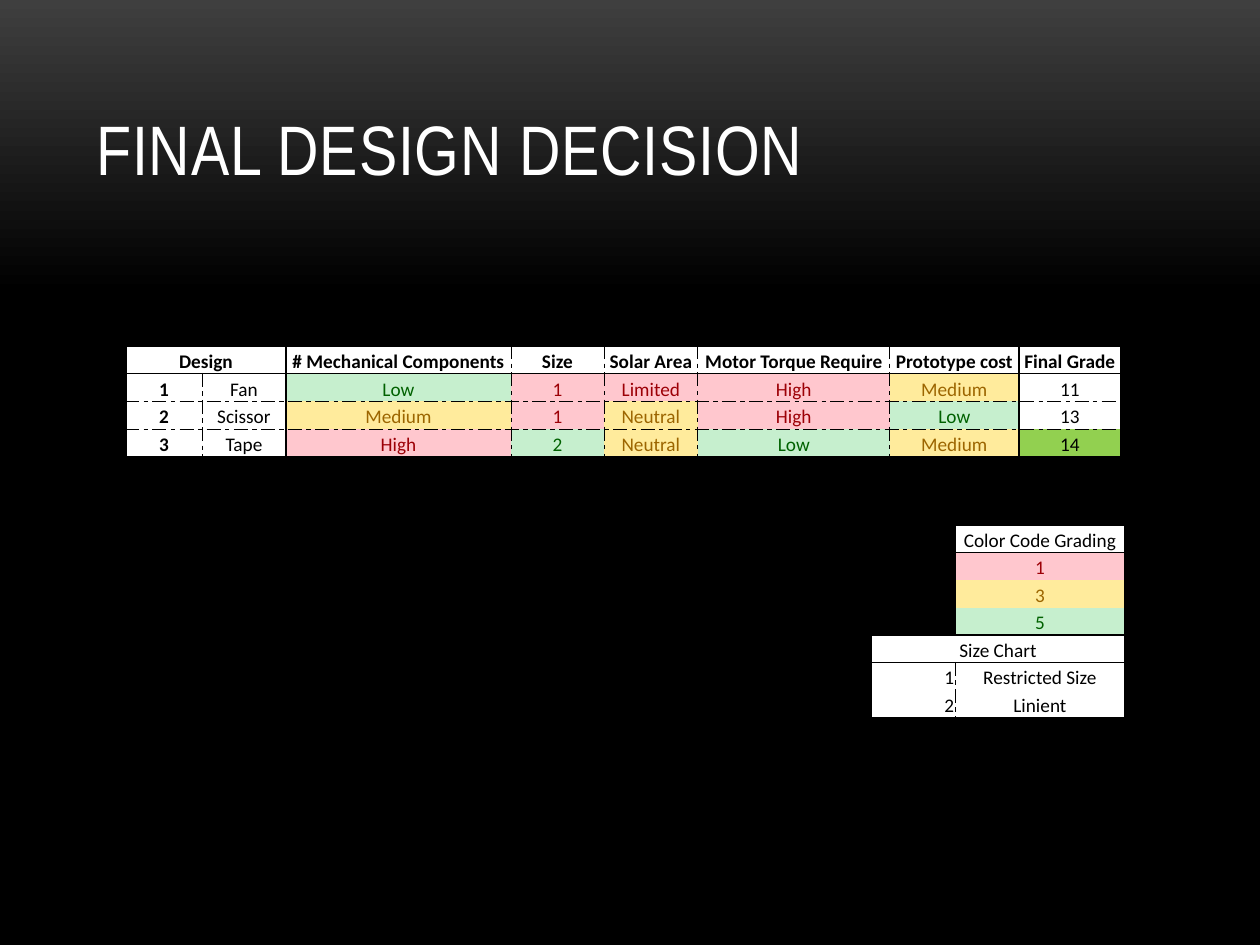
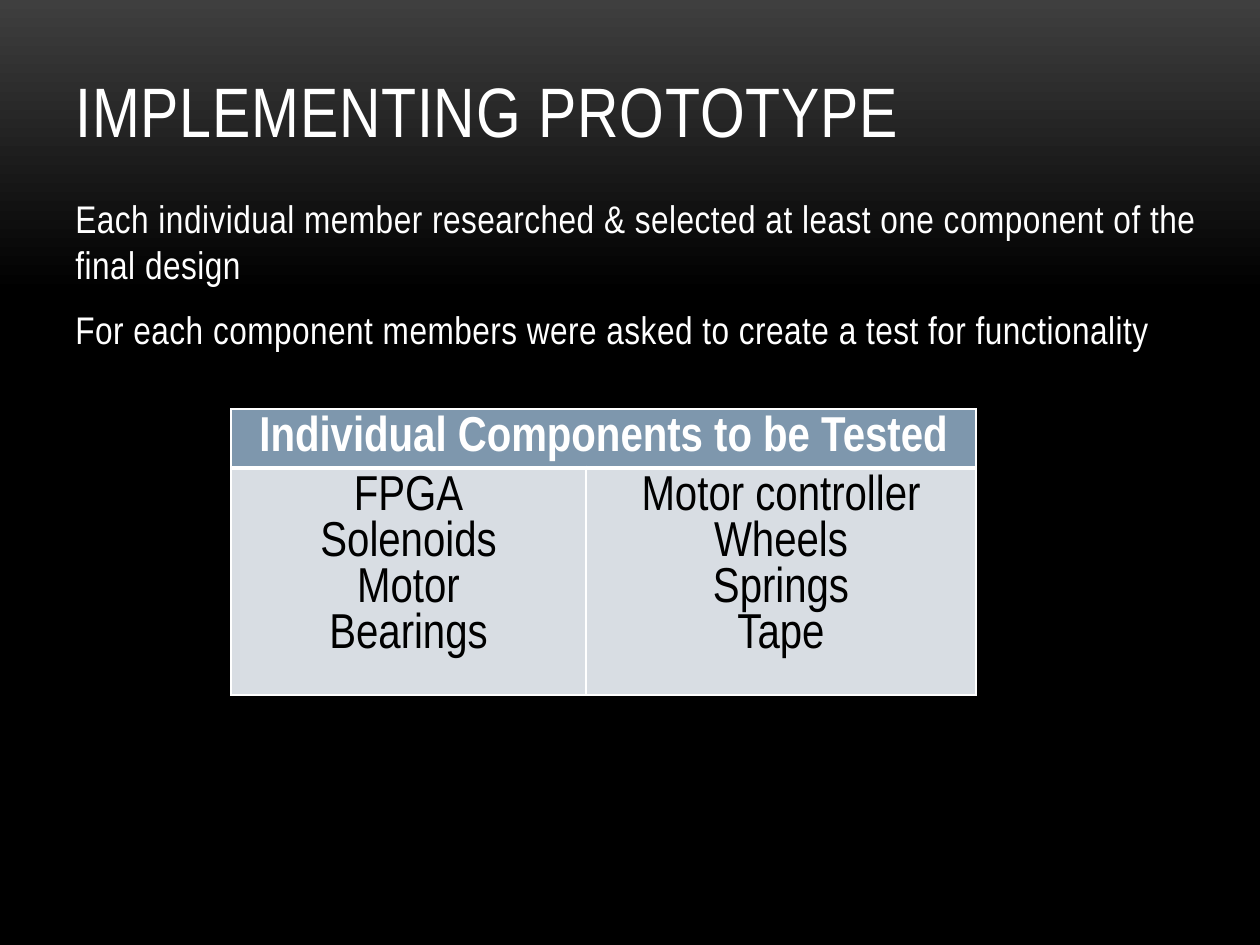
from lxml import etree
from pptx import Presentation
from pptx.dml.color import RGBColor
from pptx.enum.text import MSO_ANCHOR, PP_ALIGN
from pptx.oxml.ns import qn
from pptx.util import Pt

PX = 914400 / 126
LEFT, CENTER, RIGHT = PP_ALIGN.LEFT, PP_ALIGN.CENTER, PP_ALIGN.RIGHT
TOP, BOTTOM = MSO_ANCHOR.TOP, MSO_ANCHOR.BOTTOM
HEADING_FONT, GRID_FONT = "Arial Narrow", "Calibri"
PLAIN_TABLE = "{2D5ABB26-0587-4C30-8999-92F81FD0307C}"

WHITE = RGBColor(0xFF, 0xFF, 0xFF)
BLACK = RGBColor(0x00, 0x00, 0x00)
CHARCOAL = RGBColor(0x3F, 0x3F, 0x3F)
STEEL = RGBColor(0x7E, 0x97, 0xAD)
MIST = RGBColor(0xD8, 0xDD, 0xE3)
WINNER = RGBColor(0x92, 0xD0, 0x50)
RED = RGBColor(0xFF, 0xC7, 0xCE), RGBColor(0x9C, 0x00, 0x06)
YELLOW = RGBColor(0xFF, 0xEB, 0x9C), RGBColor(0x9C, 0x65, 0x00)
GREEN = RGBColor(0xC6, 0xEF, 0xCE), RGBColor(0x00, 0x61, 0x00)

GRADES = {
    "High": RED, "Limited": RED, "1": RED,
    "Medium": YELLOW, "Neutral": YELLOW, "3": YELLOW,
    "Low": GREEN, "2": GREEN, "5": GREEN,
}
SOLID, DASHED, RULE = (1, "solid"), (0.5, "dashDot"), (3, "solid")


def write(frame, text, size, color, font=HEADING_FONT, bold=False, align=LEFT,
          tracking=0, leading=None, before=0, after=0):
    frame.word_wrap = True
    for index, line in enumerate(text.split("\n")):
        para = frame.add_paragraph() if index else frame.paragraphs[0]
        para.alignment = align
        para.space_before = Pt(before if index else 0)
        para.space_after = Pt(after)
        if leading:
            para.line_spacing = leading
        if not line:
            para._p.get_or_add_endParaRPr().set("sz", str(size * 100))
            continue
        span = para.add_run()
        span.text = line
        span.font.name = font
        span.font.size = Pt(size)
        span.font.bold = bold
        span.font.color.rgb = color
        if tracking:
            span._r.get_or_add_rPr().set("spc", str(tracking))


def set_borders(cell, color, **sides):
    properties = cell._tc.get_or_add_tcPr()
    for position, side in enumerate("LRTB"):
        style = sides[side]
        line = etree.Element(qn(f"a:ln{side}"))
        if style:
            width, dash = style
            line.set("w", str(Pt(width)))
            fill = etree.SubElement(line, qn("a:solidFill"))
            etree.SubElement(fill, qn("a:srgbClr"), val=str(color))
            etree.SubElement(line, qn("a:prstDash"), val=dash)
        else:
            etree.SubElement(line, qn("a:noFill"))
        properties.insert(position, line)


deck = Presentation()
deck.slide_width = round(1260 * PX)
deck.slide_height = round(945 * PX)

pages = []
for title, left, top, width, height in [
    ("FINAL DESIGN DECISION", 84, 38, 1092, 158),
    ("IMPLEMENTING PROTOTYPE", 63, 38, 1134, 120),
]:
    page = deck.slides.add_slide(deck.slide_layouts[6])
    backdrop = page.background.fill
    backdrop.gradient()
    backdrop.gradient_angle = 270
    for stop, color, position in zip(backdrop.gradient_stops, (CHARCOAL, BLACK), (0, 0.31)):
        stop.color.rgb = color
        stop.position = position
    box = page.shapes.add_textbox(*(round(n * PX) for n in (left, top, width, height)))
    box.text_frame.vertical_anchor = BOTTOM
    write(box.text_frame, title, 40, WHITE, tracking=50)
    pages.append(page)

decision_page, prototype_page = pages

decision_matrix = dict(
    left=126, top=346, height=111,
    widths=[76, 84, 225, 93, 94, 192, 129, 102],
    rows=[
        ["Design", "", "# Mechanical Components", "Size", "Solar Area",
         "Motor Torque Require", "Prototype cost", "Final Grade"],
        ["1", "Fan", "Low", "1", "Limited", "High", "Medium", "11"],
        ["2", "Scissor", "Medium", "1", "Neutral", "High", "Low", "13"],
        ["3", "Tape", "High", "2", "Neutral", "Low", "Medium", "14"],
    ],
    merged_row=0, graded_columns=range(2, 7), bold_heads=True, first_align=CENTER,
    solid_columns={0, 2, 7, 8}, solid_rows={0, 1, 4}, other_rows=DASHED,
)
grading_key = dict(
    left=871, top=525, height=193,
    widths=[84, 170],
    rows=[
        ["", "Color Code Grading"],
        ["", "1"],
        ["", "3"],
        ["", "5"],
        ["Size Chart", ""],
        ["1", "Restricted Size"],
        ["2", "Linient"],
    ],
    merged_row=4, graded_columns=range(1, 2), bold_heads=False, first_align=RIGHT,
    solid_columns={0, 2}, solid_rows={0, 1, 4, 5, 7}, other_rows=None,
)

for grid in (decision_matrix, grading_key):
    rows, widths, height = grid["rows"], grid["widths"], grid["height"]
    merged_row = grid["merged_row"]
    table = decision_page.shapes.add_table(
        len(rows), len(widths), round(grid["left"] * PX), round(grid["top"] * PX),
        round(sum(widths) * PX), round(height * PX)).table
    table._tbl.tblPr.find(qn("a:tableStyleId")).text = PLAIN_TABLE
    table.first_row = table.horz_banding = False
    for column, width in zip(table.columns, widths):
        column.width = round(width * PX)
    table.cell(merged_row, 0).merge(table.cell(merged_row, 1))

    for r, texts in enumerate(rows):
        table.rows[r].height = round(height * PX / len(rows))
        for c, text in enumerate(texts):
            cell = table.cell(r, c)
            cell.margin_left = cell.margin_right = cell.margin_top = round(PX)
            cell.margin_bottom = 0
            cell.vertical_anchor = BOTTOM
            fill, ink = WHITE, BLACK
            if 1 <= r <= 3 and c in grid["graded_columns"]:
                fill, ink = GRADES[text]
            elif text == "14":
                fill = WINNER
            in_first = c == 0 and not cell.is_merge_origin
            write(cell.text_frame, text, 11, ink, font=GRID_FONT,
                  bold=grid["bold_heads"] and (r == 0 or c == 0),
                  align=grid["first_align"] if in_first else CENTER)
            if not text:
                cell.fill.background()
                continue
            cell.fill.solid()
            cell.fill.fore_color.rgb = fill
            right = c + (2 if cell.is_merge_origin else 1)
            across = [SOLID if edge in grid["solid_columns"] or r < merged_row else DASHED
                      for edge in (c, right)]
            down = [SOLID if edge in grid["solid_rows"] else grid["other_rows"]
                    for edge in (r, r + 1)]
            set_borders(cell, BLACK, L=across[0], R=across[1], T=down[0], B=down[1])

body = prototype_page.shapes.add_textbox(*(round(n * PX) for n in (63, 189, 1176, 158)))
write(body.text_frame,
      "Each individual member researched & selected at least one component of the final design\n"
      "For each component members were asked to create a test for functionality",
      22, WHITE, tracking=30, before=4.4, after=6)

component_widths, component_heights = (355, 390), (59, 227)
components = prototype_page.shapes.add_table(
    2, 2, round(231 * PX), round(409 * PX),
    round(sum(component_widths) * PX), round(sum(component_heights) * PX)).table
components._tbl.tblPr.find(qn("a:tableStyleId")).text = PLAIN_TABLE
components.horz_banding = False
for column, width in zip(components.columns, component_widths):
    column.width = round(width * PX)
for row, height in zip(components.rows, component_heights):
    row.height = round(height * PX)
components.cell(0, 0).merge(components.cell(0, 1))

for r, c, text, fill, ink in [
    (0, 0, "Individual Components to be Tested", STEEL, WHITE),
    (1, 0, "FPGA\nSolenoids\nMotor\nBearings", MIST, BLACK),
    (1, 1, "Motor controller\nWheels\nSprings\nTape", MIST, BLACK),
]:
    cell = components.cell(r, c)
    cell.vertical_anchor = TOP
    cell.fill.solid()
    cell.fill.fore_color.rgb = fill
    write(cell.text_frame, text, 28, ink, bold=r == 0, align=CENTER, leading=Pt(26.3))
    set_borders(cell, WHITE, L=SOLID, R=SOLID,
                T=RULE if r else SOLID, B=SOLID if r else RULE)

deck.save("out.pptx")
